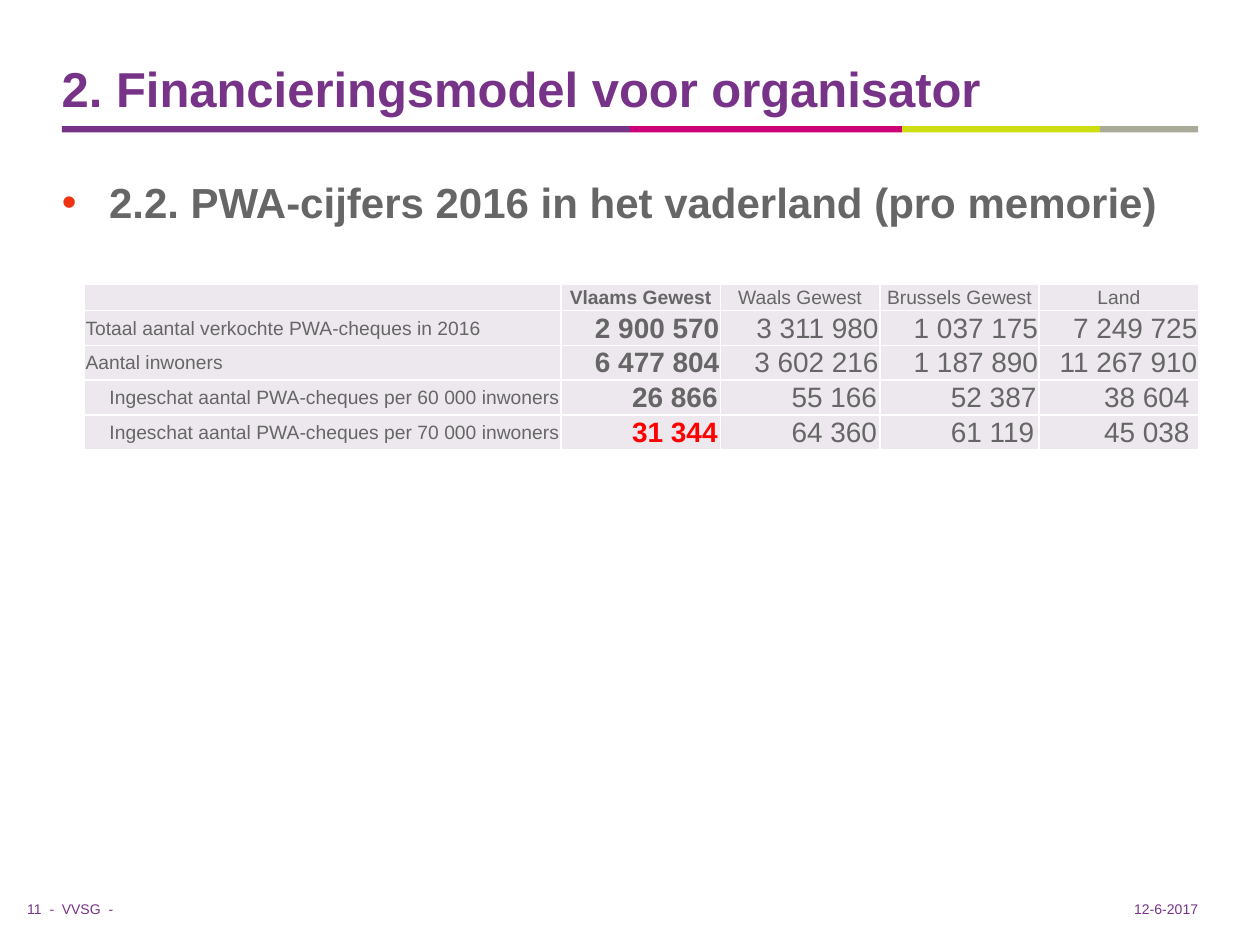
from lxml import etree
from pptx import Presentation
from pptx import util as u
from pptx.dml.color import RGBColor
from pptx.enum import shapes, text
from pptx.oxml.ns import qn

Pt = u.Pt
PURPLE, GREY, RED, CELL = "773388", "666666", "FF0000", "ECE8ED"
LEFT, RIGHT = 35.3, 684.7
AL = text.PP_ALIGN


def rgb(value):
    return RGBColor.from_string(value)


def add_run(p, words, size, color, bold=False):
    r = p.add_run()
    r.text = words
    r.font.name = "Arial"
    r.font.size = Pt(size)
    r.font.bold = bold
    r.font.color.rgb = rgb(color)


def add_bar(s, x, width, color):
    sp = s.shapes.add_shape(shapes.MSO_SHAPE.RECTANGLE,
                            Pt(x), Pt(72), Pt(width), Pt(3.6))
    sp.shadow.inherit = False
    sp.fill.solid()
    sp.fill.fore_color.rgb = rgb(color)
    sp.line.fill.background()


def add_text(s, box, words, size, color, bold=False, align=AL.LEFT,
             anchor=text.MSO_ANCHOR.BOTTOM, bullet=None):
    tf = s.shapes.add_textbox(*[Pt(v) for v in box]).text_frame
    tf.word_wrap = True
    tf.vertical_anchor = anchor
    tf.margin_left = tf.margin_right = tf.margin_top = tf.margin_bottom = 0
    p = tf.paragraphs[0]
    p.alignment = align
    if bullet:
        add_bullet(p, bullet, 27)
    add_run(p, words, size, color, bold)


def add_bullet(p, color, indent):
    pr = p._p.get_or_add_pPr()
    pr.set("marL", str(Pt(indent)))
    pr.set("indent", str(-Pt(indent)))
    clr = etree.SubElement(pr, qn("a:buClr"))
    etree.SubElement(clr, qn("a:srgbClr"), val=color)
    etree.SubElement(pr, qn("a:buFont"), typeface="Arial")
    etree.SubElement(pr, qn("a:buChar"), char="•")


def add_borders(cell, color):
    pr = cell._tc.get_or_add_tcPr()
    for i, side in enumerate(("lnL", "lnR", "lnT", "lnB")):
        ln = etree.Element(qn("a:" + side), w=str(Pt(1)))
        fill = etree.SubElement(ln, qn("a:solidFill"))
        etree.SubElement(fill, qn("a:srgbClr"), val=color)
        pr.insert(i, ln)


def fill_cell(cell, words, size, color, bold, align, left=0.7, right=0.7):
    cell.fill.solid()
    cell.fill.fore_color.rgb = rgb(CELL)
    add_borders(cell, "FFFFFF")
    cell.vertical_anchor = text.MSO_ANCHOR.MIDDLE
    cell.margin_left, cell.margin_right = Pt(left), Pt(right)
    cell.margin_top, cell.margin_bottom = Pt(0.7), 0
    p = cell.text_frame.paragraphs[0]
    p.alignment = align
    if words:
        add_run(p, words, size, color, bold)
    else:
        etree.SubElement(p._p, qn("a:endParaRPr"), sz=str(size * 100))


def add_figures(s, rows):
    widths, heights = [272.4] + [91.1] * 4, [15.1] + [18.5] * 4
    frame = s.shapes.add_table(len(rows), len(widths), Pt(48.2), Pt(162.3),
                               Pt(sum(widths)), Pt(sum(heights)))
    table = frame.table
    table.first_row = table.horz_banding = False
    for col, width in zip(table.columns, widths):
        col.width = Pt(width)
    for i, (row, height) in enumerate(zip(rows, heights)):
        table.rows[i].height = Pt(height)
        estimate = i >= 3
        for j, words in enumerate(row):
            size = 11 if i == 0 or j == 0 else 16
            color = RED if (i, j) == (4, 1) else GREY
            align, left, right = AL.RIGHT, 0.7, 0.7
            if i == 0:
                align = AL.CENTER
            elif j == 0 and not estimate:
                align = AL.LEFT
            elif estimate and 1 <= j <= 3:
                align, left = AL.LEFT, 40.7
            elif estimate and j == 4:
                right = 5.2
            fill_cell(table.cell(i, j), words, size, color, j == 1,
                      align, left, right)


def main():
    prs = Presentation()
    prs.slide_width, prs.slide_height = Pt(720), Pt(540)
    s = prs.slides.add_slide(prs.slide_layouts[6])

    # Coloured rule under the title
    edges = [LEFT, 360, 515.5, 628.6, RIGHT]
    colors = [PURPLE, "CC0077", "CCDD11", "AAAA99"]
    for x, end, color in zip(edges, edges[1:], colors):
        add_bar(s, x, end - x, color)

    # Title and subject
    add_text(s, (LEFT, 0, 579, 67), "2. Financieringsmodel voor organisator",
             28, PURPLE, bold=True)
    add_text(s, (LEFT, 101, RIGHT - LEFT, 44.6),
             "2.2. PWA-cijfers 2016 in het vaderland (pro memorie)",
             24, GREY, bold=True, anchor=text.MSO_ANCHOR.TOP, bullet="EE3311")

    # Figures per region
    add_figures(s, [
        ["", "Vlaams Gewest", "Waals Gewest", "Brussels Gewest", "Land"],
        ["Totaal aantal verkochte PWA-cheques in 2016",
         "2 900 570", "3 311 980", "1 037 175", "7 249 725"],
        ["Aantal inwoners",
         "6 477 804", "3 602 216", "1 187 890", "11 267 910"],
        ["Ingeschat aantal PWA-cheques per 60 000 inwoners",
         "26 866", "55 166", "52 387", "38 604"],
        ["Ingeschat aantal PWA-cheques per 70 000 inwoners",
         "31 344", "64 360", "61 119", "45 038"],
    ])

    # Footer
    for x, width, words, align in [
            (0, 31, "11  -", AL.RIGHT),
            (LEFT, 34, "VVSG  -", AL.LEFT),
            (628.6, RIGHT - 628.6, "12-6-2017", AL.RIGHT)]:
        add_text(s, (x, 514.8, width, 9.4), words, 8, PURPLE, align=align)

    prs.save("out.pptx")


if __name__ == "__main__":
    main()
